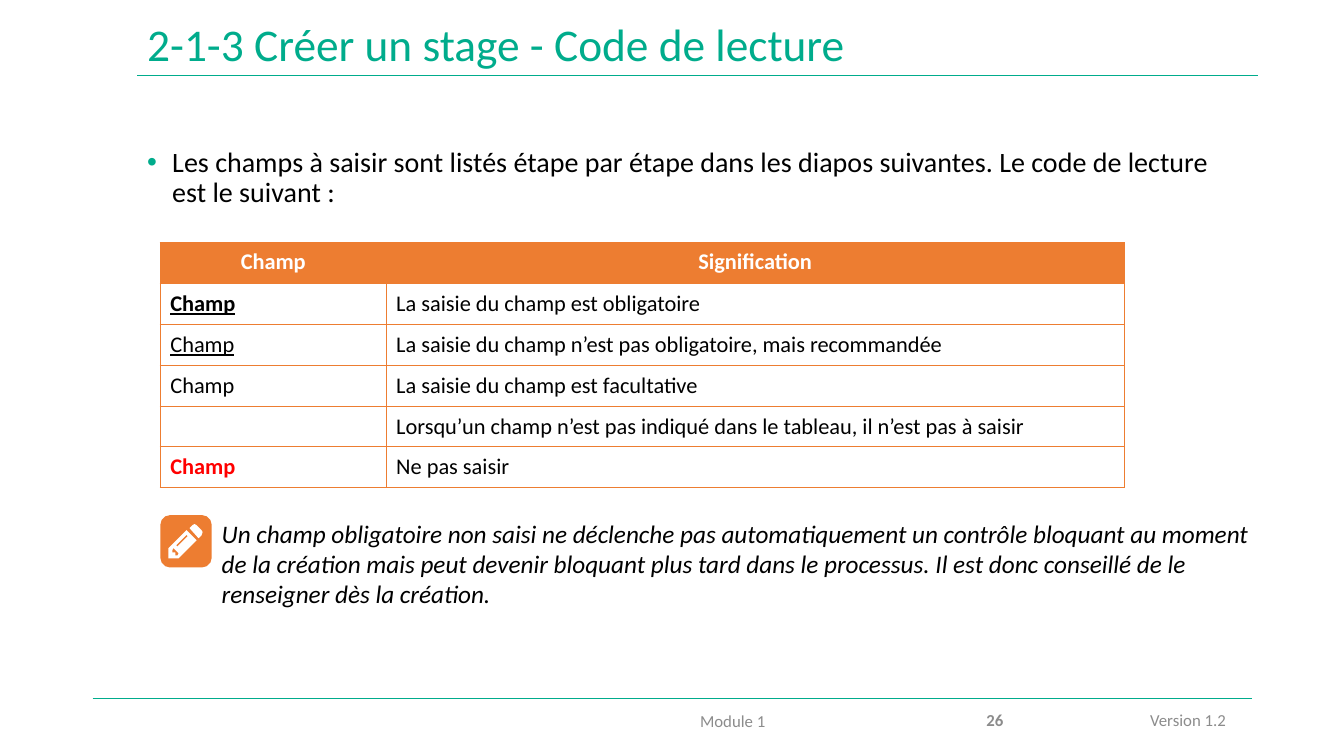
from lxml import etree
from pptx import Presentation, util as u
from pptx.dml.color import RGBColor
from pptx.enum import shapes as kinds, text as t
from pptx.oxml.ns import qn

Inches = u.Inches
COLORS = {"green": "00AC8C", "orange": "ED7D31", "grey": "8C8C8C",
          "black": "000000", "white": "FFFFFF", "red": "FF0000"}
LEFT, CENTER, RIGHT = t.PP_ALIGN.LEFT, t.PP_ALIGN.CENTER, t.PP_ALIGN.RIGHT
MIDDLE, TOP = t.MSO_ANCHOR.MIDDLE, t.MSO_ANCHOR.TOP


def write(frame, words, size, color, align=LEFT, anchor=TOP,
          bold=False, italic=False, underline=False):
    frame.text = words
    frame.word_wrap = True
    frame.vertical_anchor = anchor
    paragraph = frame.paragraphs[0]
    paragraph.alignment = align
    for run in paragraph.runs:
        font = run.font
        font.name, font.size = "Calibri", u.Pt(size)
        font.bold, font.italic, font.underline = bold, italic, underline
        font.color.rgb = RGBColor.from_string(COLORS[color])
    return paragraph


def paint(shape, color):
    shape.shadow.inherit = False
    shape.fill.solid()
    shape.fill.fore_color.rgb = RGBColor.from_string(COLORS[color])
    shape.line.fill.background()


deck = Presentation()
deck.slide_width, deck.slide_height = Inches(13.33), Inches(7.5)
slide = deck.slides.add_slide(deck.slide_layouts[5])
items = slide.shapes

# Rules under the title and above the footer
for x1, x2, y in [(1.36, 12.48, 0.75), (0.92, 12.42, 6.93)]:
    rule = items.add_connector(kinds.MSO_CONNECTOR.STRAIGHT,
                               Inches(x1), Inches(y), Inches(x2), Inches(y))
    rule.line.color.rgb = RGBColor.from_string(COLORS["green"])
    rule.line.width = u.Pt(0.5)
    etree.SubElement(rule._element.spPr, qn("a:effectLst"))

# Title
title = items.title
title.left, title.top = Inches(1.36), Inches(0.18)
title.width, title.height = Inches(11.12), Inches(0.57)
heading = write(title.text_frame, "2-1-3 Créer un stage - Code de lecture",
                32.4, "green", anchor=MIDDLE)
heading.line_spacing = 0.9
title.text_frame.auto_size = t.MSO_AUTO_SIZE.NONE

# Introduction bullet
intro = items.add_textbox(Inches(1.36), Inches(1.42), Inches(11.05), Inches(0.8))
bullet = write(intro.text_frame,
               "Les champs à saisir sont listés étape par étape dans les diapos "
               "suivantes. Le code de lecture est le suivant :", 20, "black")
bullet.line_spacing = 0.9
props = bullet._p.get_or_add_pPr()
props.set("marL", str(Inches(0.25)))
props.set("indent", str(Inches(-0.25)))
bullet_color = etree.SubElement(props, qn("a:buClr"))
etree.SubElement(bullet_color, qn("a:srgbClr"), val=COLORS["green"])
etree.SubElement(props, qn("a:buFont"), typeface="Arial")
etree.SubElement(props, qn("a:buChar"), char="•")

# Reading code table: field, meaning, style of the field
header = dict(color="white", bold=True, align=CENTER)
plain = dict(color="black", anchor=MIDDLE)
rows = [
    ("Champ", "Signification", header),
    ("Champ", "La saisie du champ est obligatoire",
     dict(plain, bold=True, underline=True)),
    ("Champ", "La saisie du champ n’est pas obligatoire, mais recommandée",
     dict(plain, underline=True)),
    ("Champ", "La saisie du champ est facultative", plain),
    ("", "Lorsqu’un champ n’est pas indiqué dans le tableau, il n’est pas à saisir",
     plain),
    ("Champ", "Ne pas saisir", dict(plain, color="red", bold=True)),
]
code = items.add_table(len(rows), 2, Inches(1.59), Inches(2.41),
                       Inches(9.56), Inches(2.43)).table
code.horz_banding = False
for column, width in zip(code.columns, (2.24, 7.32)):
    column.width = Inches(width)
for r, (field, meaning, style) in enumerate(rows):
    code.rows[r].height = Inches(0.405)
    for c, words in enumerate((field, meaning)):
        cell = code.cell(r, c)
        cell_style = dict(style if c == 0 or r == 0 else plain)
        cell.vertical_anchor = cell_style.pop("anchor", TOP)
        write(cell.text_frame, words, 16, **cell_style)
        if r == 0:
            cell.fill.solid()
            cell.fill.fore_color.rgb = RGBColor.from_string(COLORS["orange"])
        else:
            cell.fill.background()
        cell_props = cell._tc.get_or_add_tcPr()
        for i, side in enumerate(("lnL", "lnR", "lnT", "lnB")):
            border = etree.Element(qn("a:" + side), w=str(u.Pt(1)))
            ink = etree.SubElement(border, qn("a:solidFill"))
            etree.SubElement(ink, qn("a:srgbClr"), val=COLORS["orange"])
            cell_props.insert(i, border)

# Note
note = items.add_textbox(Inches(2.1), Inches(5.09), Inches(10.61), Inches(1.01))
write(note.text_frame,
      "Un champ obligatoire non saisi ne déclenche pas automatiquement un contrôle "
      "bloquant au moment de la création mais peut devenir bloquant plus tard dans "
      "le processus. Il est donc conseillé de le renseigner dès la création.",
      18, "black", italic=True)

# Pencil icon
badge = items.add_shape(kinds.MSO_SHAPE.ROUNDED_RECTANGLE, Inches(1.59),
                        Inches(5.11), Inches(0.51), Inches(0.52))
badge.adjustments[0] = 0.19
paint(badge, "orange")
pencil = [
    ("white", [(1.85, 5.26), (1.67, 5.44), (1.67, 5.54), (1.77, 5.54), (1.95, 5.36)]),
    ("white", [(1.93, 5.2), (1.91, 5.21), (1.88, 5.24), (1.97, 5.34), (2, 5.31),
               (2.01, 5.28), (2, 5.26), (1.95, 5.21)]),
    ("orange", [(1.72, 5.44), (1.77, 5.49), (1.76, 5.51), (1.74, 5.51),
                (1.74, 5.48), (1.71, 5.48), (1.71, 5.46)]),
    ("orange", [(1.85, 5.31), (1.86, 5.32), (1.76, 5.42), (1.75, 5.41)]),
]
for color, points in pencil:
    corners = [(Inches(x), Inches(y)) for x, y in points]
    outline = items.build_freeform(*corners[0], scale=1.0)
    outline.add_line_segments(corners[1:], close=True)
    paint(outline.convert_to_shape(), color)

# Footer
footer = [("Module 1", 4.42, 6.95, 3.27, RIGHT, False),
          ("26", 9, 6.94, 1.05, RIGHT, True),
          ("Version 1.2", 11.31, 6.94, 1.13, LEFT, False)]
for words, x, y, width, align, bold in footer:
    label = items.add_textbox(Inches(x), Inches(y), Inches(width), Inches(0.41))
    write(label.text_frame, words, 12, "grey", align, MIDDLE, bold)

deck.save("out.pptx")
